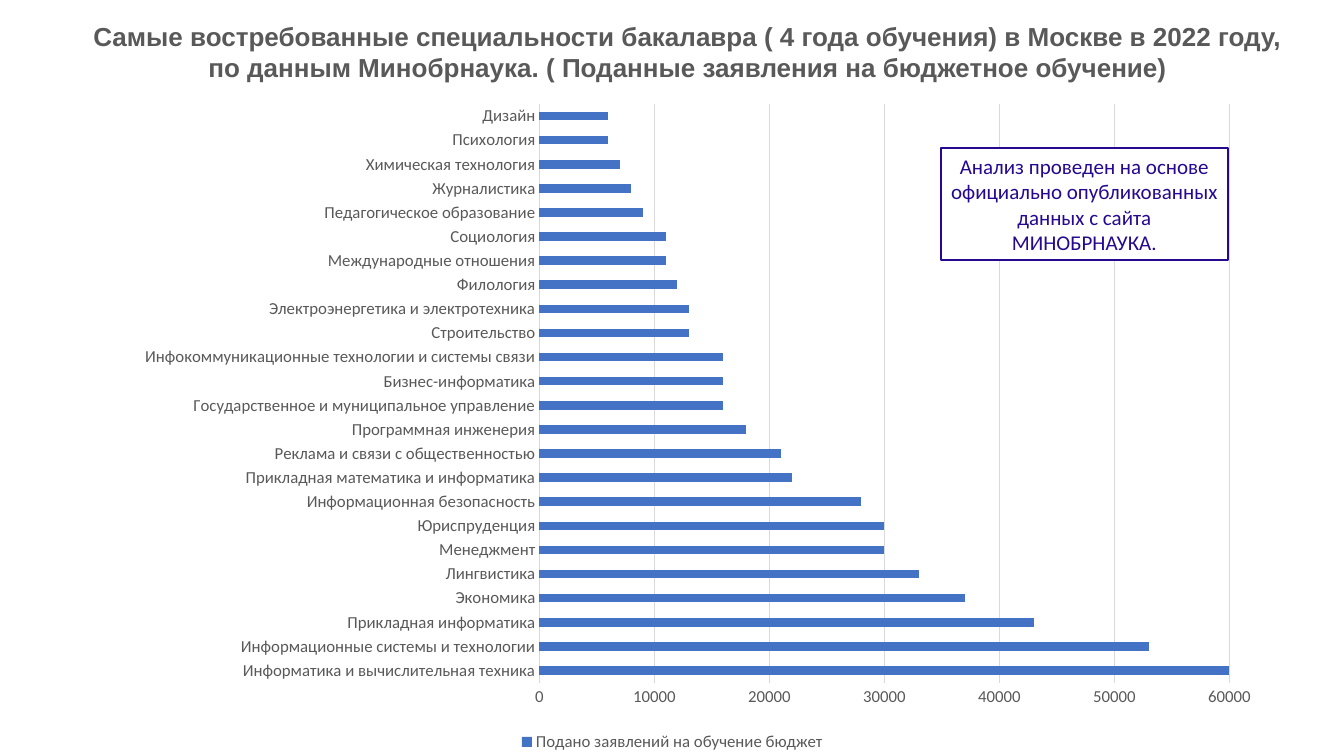
from lxml import etree
from pptx import Presentation
from pptx import util as u
from pptx.chart.data import CategoryChartData
from pptx.dml.color import RGBColor
from pptx.enum import chart as charts, shapes, text

COLORS = {"white": "FFFFFF", "gray": "595959", "grid": "D9D9D9",
          "bar": "4472C4", "note": "26098F"}
APPLICATIONS = [
    ("Информатика и вычислительная техника", 60000),
    ("Информационные системы и технологии", 53000),
    ("Прикладная информатика", 43000),
    ("Экономика", 37000),
    ("Лингвистика", 33000),
    ("Менеджмент", 30000),
    ("Юриспруденция", 30000),
    ("Информационная безопасность", 28000),
    ("Прикладная математика и информатика", 22000),
    ("Реклама и связи с общественностью", 21000),
    ("Программная инженерия", 18000),
    ("Государственное и муниципальное управление", 16000),
    ("Бизнес-информатика", 16000),
    ("Инфокоммуникационные технологии и системы связи", 16000),
    ("Строительство", 13000),
    ("Электроэнергетика и электротехника", 13000),
    ("Филология", 12000),
    ("Международные отношения", 11000),
    ("Социология", 11000),
    ("Педагогическое образование", 9000),
    ("Журналистика", 8000),
    ("Химическая технология", 7000),
    ("Психология", 6000),
    ("Дизайн", 6000),
]


def color(name):
    return RGBColor.from_string(COLORS[name])


def style_font(font, name, size, color_name, bold=False):
    font.name, font.size, font.bold = name, u.Pt(size), bold
    font.color.rgb = color(color_name)


presentation = Presentation()
presentation.slide_width = u.Inches(13.33)
presentation.slide_height = u.Inches(7.5)
slide = presentation.slides.add_slide(presentation.slide_layouts[5])
left = u.Inches(0.78)
chart_top = u.Inches(0.88)

# Bar chart
chart_data = CategoryChartData()
chart_data.categories = [name for name, count in APPLICATIONS]
chart_data.add_series("Подано заявлений на обучение бюджет",
                      [count for name, count in APPLICATIONS])
chart = slide.shapes.add_chart(
    charts.XL_CHART_TYPE.BAR_CLUSTERED, left, chart_top, u.Inches(11.78),
    presentation.slide_height - chart_top, chart_data).chart
chart.has_title = False
style_font(chart.font, "Calibri", 12, "gray")
plot = chart.plots[0]
plot.gap_width = 182
plot.vary_by_categories = False
bars = plot.series[0].format.fill
bars.solid()
bars.fore_color.rgb = color("bar")

# Axes and gridlines
for axis in (chart.category_axis, chart.value_axis):
    axis.major_tick_mark = axis.minor_tick_mark = charts.XL_TICK_MARK.NONE
    style_font(axis.tick_labels.font, "Calibri", 12, "gray")
chart.value_axis.minimum_scale = 0
chart.value_axis.maximum_scale = 60000
chart.value_axis.major_unit = 10000
chart.value_axis.format.line.fill.background()
for line in (chart.category_axis.format.line,
             chart.value_axis.major_gridlines.format.line):
    line.color.rgb = color("grid")
    line.width = u.Pt(0.75)

# Legend
chart.has_legend = True
chart.legend.position = charts.XL_LEGEND_POSITION.BOTTOM
chart.legend.include_in_layout = False
style_font(chart.legend.font, "Calibri", 12, "gray")

# Plot area as shares of the chart
plot_area = chart._chartSpace.chart.plotArea
namespace = "{" + plot_area.nsmap["c"] + "}"
for old_layout in plot_area.findall(namespace + "layout"):
    plot_area.remove(old_layout)
layout = etree.Element(namespace + "layout")
manual = etree.SubElement(layout, namespace + "manualLayout")
for tag, value in (("layoutTarget", "inner"), ("xMode", "edge"), ("yMode", "edge"),
                   ("x", 0.388), ("y", 0.023), ("w", 0.581), ("h", 0.867)):
    etree.SubElement(manual, namespace + tag).set("val", str(value))
plot_area.insert(0, layout)

# Title
title = slide.shapes.title
title.left, title.top = left, u.Inches(0.15)
title.width, title.height = u.Inches(12.08), u.Inches(0.73)

# Note about the data
note = slide.shapes.add_shape(
    shapes.MSO_SHAPE.RECTANGLE, u.Inches(9.33), u.Inches(1.47),
    u.Inches(2.85), u.Inches(1.11))
note.shadow.inherit = False
note.fill.solid()
note.fill.fore_color.rgb = color("white")
note.line.color.rgb = color("note")
note.line.width = u.Pt(1.25)

# Text of the title and the note
for shape, words, font_name, size, color_name, bold in (
    (title, "Самые востребованные специальности бакалавра ( 4 года обучения) "
            "в Москве в 2022 году, по данным Минобрнаука. "
            "( Поданные заявления на бюджетное обучение)",
     "Arial", 18.6, "gray", True),
    (note, "Анализ проведен на основе официально опубликованных "
           "данных с сайта МИНОБРНАУКА.", "Calibri", 15, "note", False),
):
    frame = shape.text_frame
    frame.word_wrap = True
    frame.auto_size = text.MSO_AUTO_SIZE.NONE
    frame.vertical_anchor = text.MSO_ANCHOR.MIDDLE
    paragraph = frame.paragraphs[0]
    paragraph.alignment = text.PP_ALIGN.CENTER
    run = paragraph.add_run()
    run.text = words
    style_font(run.font, font_name, size, color_name, bold)

presentation.save("out.pptx")
